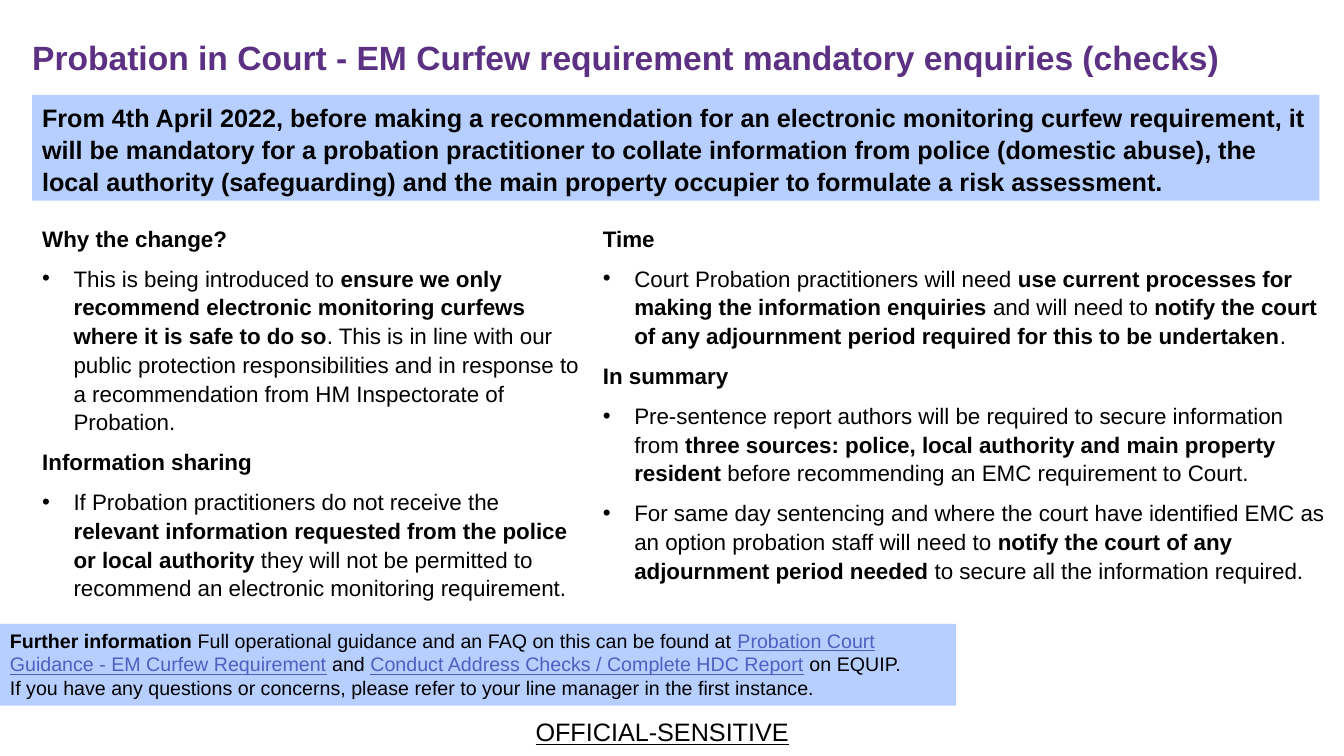
from lxml.etree import SubElement
from pptx import Presentation
from pptx.dml.color import RGBColor
from pptx.enum.shapes import MSO_SHAPE
from pptx.enum.text import MSO_ANCHOR, MSO_AUTO_SIZE, PP_ALIGN
from pptx.oxml.ns import qn
from pptx.util import Cm, Pt

COLOURS = {"title": "5C3183", "panel": "B7CFFF", "text": "000000", "link": "505DC1"}
BOLD = {"bold": True}
LINK = {"colour": "link", "underline": True}
MARGIN, COLUMN_TOP, INDENT = 0.81, 5.49, 0.79

WHY = [
    ("heading", ["Why the change?"]),
    ("bullet", [
        "This is being introduced to ",
        ("ensure we only recommend electronic monitoring curfews where it is safe to do so", BOLD),
        ". This is in line with our public protection responsibilities and in response to "
        "a recommendation from HM Inspectorate of Probation."]),
    ("heading", ["Information sharing"]),
    ("bullet", [
        "If Probation practitioners do not receive the ",
        ("relevant information requested from the police or local authority", BOLD),
        " they will not be permitted to recommend an electronic monitoring requirement."]),
]
TIME = [
    ("heading", ["Time"]),
    ("bullet", [
        "Court Probation practitioners will need ",
        ("use current processes for making the information enquiries", BOLD),
        " and will need to ",
        ("notify the court of any adjournment period required for this to be undertaken", BOLD),
        "."]),
    ("heading", ["In summary"]),
    ("bullet", [
        "Pre-sentence report authors will be required to secure information from ",
        ("three sources: police, local authority and main property resident ", BOLD),
        "before recommending an EMC requirement to Court."]),
    ("bullet", [
        "For same day sentencing and where the court have identified EMC as an option "
        "probation staff will need to ",
        ("notify the court of any adjournment period needed ", BOLD),
        "to secure all the information required."]),
]
FURTHER = [
    [("Further information ", BOLD),
     "Full operational guidance and an FAQ on this can be found at ",
     ("Probation Court Guidance - EM Curfew Requirement", LINK),
     " and ",
     ("Conduct Address Checks / Complete HDC Report", LINK),
     " on EQUIP."],
    ["If you have any questions or concerns, please refer to your line manager "
     "in the first instance."],
]


def rgb(name):
    return RGBColor.from_string(COLOURS[name])


def write(paragraph, text, size=16, bold=False, colour="text", underline=False):
    run = paragraph.add_run()
    run.text = text
    font = run.font
    font.name, font.size = "Arial", Pt(size)
    font.bold, font.underline = bold, underline
    font.color.rgb = rgb(colour)


def write_runs(paragraph, runs, **base):
    for run in runs:
        text, style = (run, {}) if isinstance(run, str) else run
        write(paragraph, text, **{**base, **style})


def set_spacing(paragraph, line=1.0, after=0):
    paragraph.alignment = PP_ALIGN.LEFT
    paragraph.line_spacing = line
    paragraph.space_before, paragraph.space_after = Pt(0), Pt(after)


def set_bullet(paragraph, bulleted):
    properties = paragraph._p.get_or_add_pPr()
    indent = Cm(INDENT) if bulleted else 0
    properties.set("marL", str(indent))
    properties.set("indent", str(-indent))
    if bulleted:
        SubElement(properties, qn("a:buFont"), typeface="Arial")
        SubElement(properties, qn("a:buChar"), char="•")
    else:
        SubElement(properties, qn("a:buNone"))


def next_paragraph(frame, index):
    return frame.add_paragraph() if index else frame.paragraphs[0]


def place(part, left, top, width, height):
    part.left, part.top, part.width, part.height = Cm(left), Cm(top), Cm(width), Cm(height)


def add_title(title, box):
    place(title, *box)
    frame = title.text_frame
    frame.vertical_anchor = MSO_ANCHOR.MIDDLE
    frame.auto_size = MSO_AUTO_SIZE.NONE
    frame.margin_left = frame.margin_top = frame.margin_right = 0
    frame.margin_bottom = Cm(0.81)
    set_spacing(frame.paragraphs[0], line=0.9)
    write(frame.paragraphs[0],
          "Probation in Court - EM Curfew requirement mandatory enquiries (checks)",
          size=24, bold=True, colour="title")


def add_column(column, box, content):
    place(column, *box)
    frame = column.text_frame
    frame.auto_size = MSO_AUTO_SIZE.SHAPE_TO_FIT_TEXT
    for index, (kind, runs) in enumerate(content):
        paragraph = next_paragraph(frame, index)
        set_bullet(paragraph, kind == "bullet")
        set_spacing(paragraph, line=1.07, after=8)
        write_runs(paragraph, runs, bold=kind == "heading")


def add_panel(slide, box, content, line=1.0, after=0, **style):
    panel = slide.shapes.add_shape(MSO_SHAPE.RECTANGLE, *map(Cm, box))
    panel.shadow.inherit = False
    panel.fill.solid()
    panel.fill.fore_color.rgb = rgb("panel")
    panel.line.fill.background()
    frame = panel.text_frame
    frame.word_wrap = True
    frame.vertical_anchor = MSO_ANCHOR.TOP
    frame.auto_size = MSO_AUTO_SIZE.SHAPE_TO_FIT_TEXT
    for index, runs in enumerate(content):
        paragraph = next_paragraph(frame, index)
        set_spacing(paragraph, line, after)
        write_runs(paragraph, runs, **style)


def add_marking(slide, box):
    marking = slide.shapes.add_textbox(*map(Cm, box))
    frame = marking.text_frame
    frame.word_wrap = False
    frame.auto_size = MSO_AUTO_SIZE.SHAPE_TO_FIT_TEXT
    frame.paragraphs[0].alignment = PP_ALIGN.CENTER
    write(frame.paragraphs[0], "OFFICIAL-SENSITIVE", size=18, underline=True)


def main():
    deck = Presentation()
    deck.slide_width, deck.slide_height = Cm(33.87), Cm(19.05)
    slide = deck.slides.add_slide(deck.slide_layouts[3])
    title, why, time = slide.placeholders

    # Title and key message
    add_title(title, (MARGIN, 0.84, 33.05, 2.11))
    add_panel(slide, (MARGIN, 2.39, 32.44, 2.67), [[
        "From 4th April 2022, before making a recommendation for an electronic monitoring "
        "curfew requirement, it will be mandatory for a probation practitioner to collate "
        "information from police (domestic abuse), the local authority (safeguarding) and "
        "the main property occupier to formulate a risk assessment."]],
        line=1.07, after=8, size=18, bold=True)

    # Two columns of details
    add_column(why, (MARGIN, COLUMN_TOP, 14.2, 9.83), WHY)
    add_column(time, (14.94, COLUMN_TOP, 18.92, 9.4), TIME)

    # Further information and security marking
    add_panel(slide, (0, 15.72, 24.1, 2.06), FURTHER, size=14)
    add_marking(slide, (13.21, 17.93, 6.96, 1.02))

    deck.save("out.pptx")


if __name__ == "__main__":
    main()
